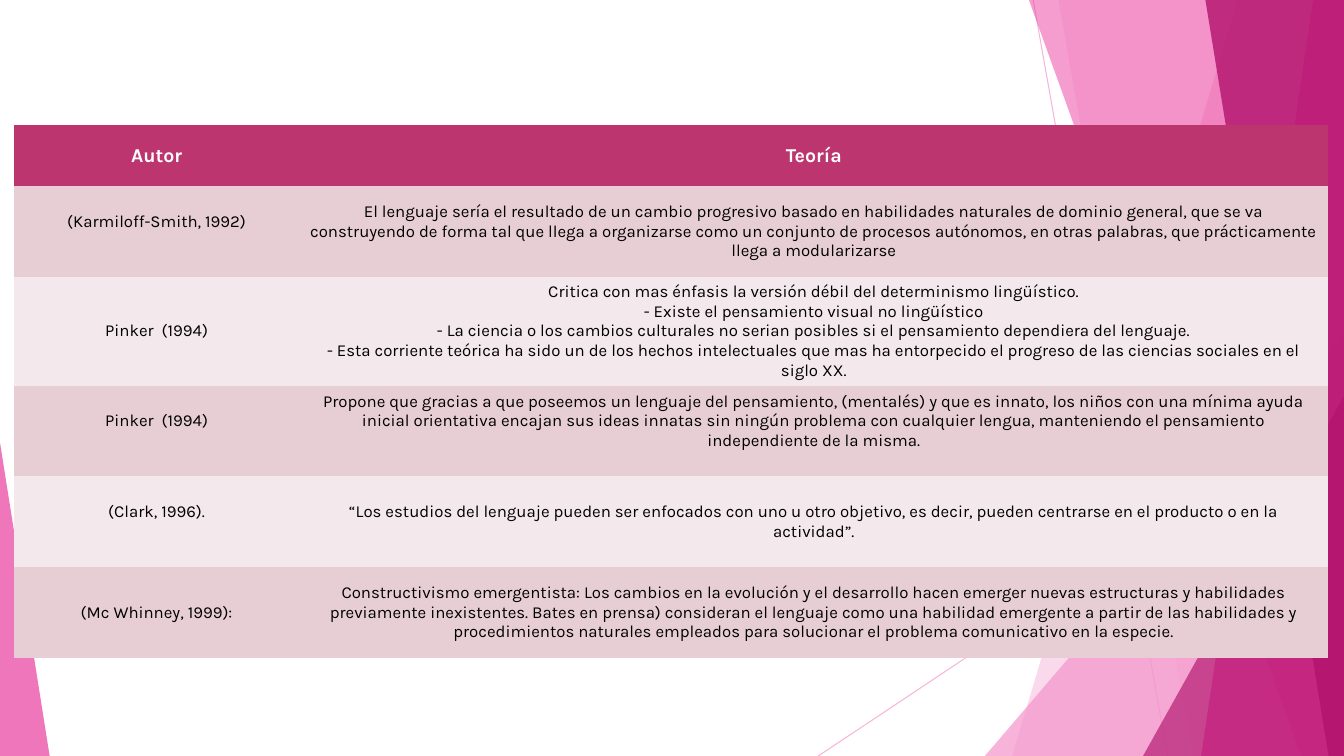
from lxml import etree
from pptx import Presentation
from pptx.dml.color import RGBColor
from pptx.enum.shapes import MSO_CONNECTOR, MSO_SHAPE
from pptx.enum.text import MSO_ANCHOR, PP_ALIGN
from pptx.oxml.ns import qn
from pptx.util import Pt

STRAIGHT = MSO_CONNECTOR.STRAIGHT
TRIANGLE = MSO_SHAPE.ISOSCELES_TRIANGLE
CENTER = PP_ALIGN.CENTER
MIDDLE = MSO_ANCHOR.MIDDLE

WIDTH, HEIGHT = 960, 540
BLANK_LAYOUT = 6
PLAIN_TABLE_STYLE = "{2D5ABB26-0587-4C30-8999-92F81FD0307C}"
PALE_PINK, PINK, MAGENTA = "F496CB", "EB3D9F", "B2136D"
HEADER_FILL, BAND_FILLS = "BC356F", ("E7CED5", "F3E8EB")
CELL_MARGIN, LIFTED_MARGIN = 3.6, 17.6

HEADER = ("Autor", "Teoría")
# Author, theory, row height, and whether each of the two texts sits above the middle.
THEORIES = [
    ("(Karmiloff-Smith, 1992)",
     "El lenguaje sería el resultado de un cambio progresivo basado en habilidades "
     "naturales de dominio general, que se va construyendo de forma tal que llega a "
     "organizarse como un conjunto de procesos autónomos, en otras palabras, que "
     "prácticamente llega a modularizarse",
     64.8, (True, False)),
    ("Pinker  (1994)",
     "Critica con mas énfasis la versión débil del determinismo lingüístico.\v"
     "- Existe el pensamiento visual no lingüístico\v"
     "- La ciencia o los cambios culturales no serian posibles si el pensamiento "
     "dependiera del lenguaje.\v"
     "- Esta corriente teórica ha sido un de los hechos intelectuales que mas ha "
     "entorpecido el progreso de las ciencias sociales en el siglo XX.",
     77.8, (False, False)),
    ("Pinker  (1994)",
     "Propone que gracias a que poseemos un lenguaje del pensamiento, (mentalés) y que "
     "es innato, los niños con una mínima ayuda inicial orientativa encajan sus ideas "
     "innatas sin ningún problema con cualquier lengua, manteniendo el pensamiento "
     "independiente de la misma.",
     64.8, (True, True)),
    ("(Clark, 1996).",
     "“Los estudios del lenguaje pueden ser enfocados con uno u otro objetivo, es decir, "
     "pueden centrarse en el producto o en la actividad”.",
     64.8, (True, False)),
    ("(Mc Whinney, 1999):",
     "Constructivismo emergentista: Los cambios en la evolución y el desarrollo hacen "
     "emerger nuevas estructuras y habilidades previamente inexistentes. Bates en prensa) "
     "consideran el lenguaje como una habilidad emergente a partir de las habilidades y "
     "procedimientos naturales empleados para solucionar el problema comunicativo en la "
     "especie.",
     64.8, (False, False)),
]


def paint(fill, color, opacity=100):
    fill.solid()
    fill.fore_color.rgb = RGBColor.from_string(color)
    if opacity < 100:
        color_element = fill._xPr.find(f"{qn('a:solidFill')}/{qn('a:srgbClr')}")
        etree.SubElement(color_element, qn("a:alpha"), val=str(opacity * 1000))


class SlideBuilder:
    font_name = "Karla"

    def __init__(self, page):
        self.shapes = page.shapes

    def line(self, start, end, color, opacity):
        connector = self.shapes.add_connector(STRAIGHT, *map(Pt, start + end))
        connector.line.width = Pt(0.75)
        paint(connector.line.fill, color, opacity)
        etree.SubElement(connector._element.spPr, qn("a:effectLst"))

    def finish(self, shape, color, opacity):
        """Give a shape a plain fill without outline or shadow."""
        paint(shape.fill, color, opacity)
        shape.line.fill.background()
        shape.shadow.inherit = False

    def edge_panel(self, top_x, bottom_x, color, opacity):
        """Fill from a slanted line to the right edge of the slide."""
        builder = self.shapes.build_freeform(Pt(top_x), 0)
        corners = [(WIDTH, 0), (WIDTH, HEIGHT), (bottom_x, HEIGHT)]
        builder.add_line_segments([(Pt(x), Pt(y)) for x, y in corners])
        self.finish(builder.convert_to_shape(), color, opacity)

    def corner_triangle(self, left, top, width, apex, color, opacity):
        """Draw a right triangle that stands on the bottom edge."""
        shape = self.shapes.add_shape(
            TRIANGLE, Pt(left), Pt(top), Pt(width), Pt(HEIGHT - top))
        shape.adjustments[0] = apex
        self.finish(shape, color, opacity)

    def cell(self, cell, text, fill, size, color, bold=False, lifted=False):
        paint(cell.fill, fill)
        cell.vertical_anchor = MIDDLE
        cell.margin_bottom = Pt(LIFTED_MARGIN if lifted else CELL_MARGIN)
        cell.text = text
        paragraph = cell.text_frame.paragraphs[0]
        paragraph.alignment = CENTER
        font = paragraph.font
        font.name, font.size, font.bold = self.font_name, Pt(size), bold
        font.color.rgb = RGBColor.from_string(color)

    def theory_table(self, left, top, column_widths, header_height):
        heights = [header_height] + [height for _, _, height, _ in THEORIES]
        frame = self.shapes.add_table(
            len(heights), len(column_widths), Pt(left), Pt(top),
            Pt(sum(column_widths)), Pt(sum(heights)))
        table = frame.table
        table.first_row = table.horz_banding = False
        table._tbl.tblPr.find(qn("a:tableStyleId")).text = PLAIN_TABLE_STYLE
        for column, width in zip(table.columns, column_widths):
            column.width = Pt(width)
        for row, height in zip(table.rows, heights):
            row.height = Pt(height)
        for column, title in enumerate(HEADER):
            self.cell(table.cell(0, column), title, HEADER_FILL, 14, "FFFFFF", bold=True)
        for index, (author, theory, _, lifts) in enumerate(THEORIES):
            for column, (text, lifted) in enumerate(zip((author, theory), lifts)):
                self.cell(table.cell(index + 1, column), text, BAND_FILLS[index % 2],
                          12, "000000", lifted=lifted)


def main():
    deck = Presentation()
    deck.slide_width, deck.slide_height = Pt(WIDTH), Pt(HEIGHT)
    slide = SlideBuilder(deck.slides.add_slide(deck.slide_layouts[BLANK_LAYOUT]))

    slide.line((738, 0), (834, HEIGHT), PALE_PINK, 70)
    slide.line((WIDTH, 290), (584.5, HEIGHT), PALE_PINK, 70)
    slide.edge_panel(884, 723, PALE_PINK, 36)
    slide.edge_panel(756, 852, PALE_PINK, 20)
    slide.corner_triangle(703.5, 240, 256.5, 1, PALE_PINK, 72)
    slide.edge_panel(735, 929.5, PINK, 50)
    slide.edge_panel(938, 858, PINK, 70)
    slide.edge_panel(861, 949, MAGENTA, 80)
    slide.corner_triangle(816.5, 283, 143.5, 1, MAGENTA, 66)
    slide.corner_triangle(0, 316, 35.5, 0, PINK, 70)

    slide.theory_table(10, 89.3, (203.8, 735.1), 43.7)
    deck.save("out.pptx")


if __name__ == "__main__":
    main()
